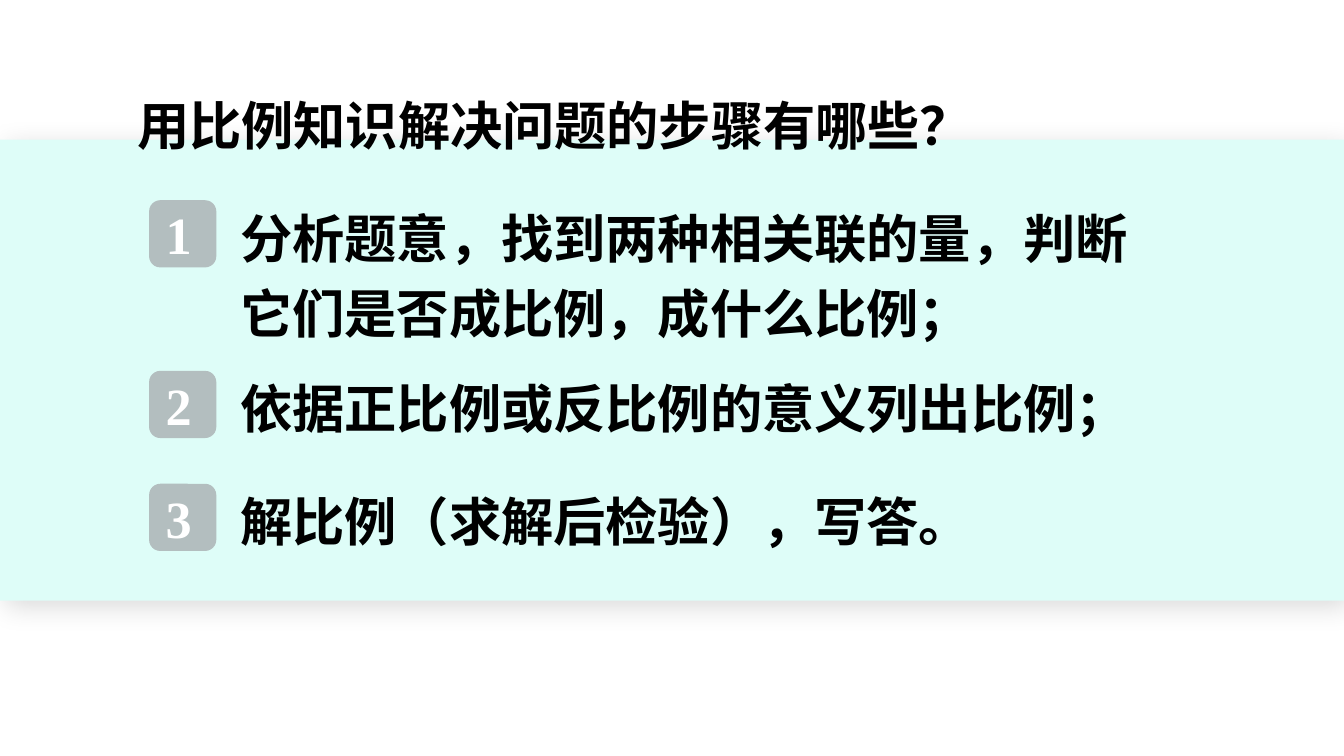
from lxml.etree import SubElement
from pptx import Presentation
from pptx.dml.color import RGBColor
from pptx.enum.shapes import MSO_SHAPE
from pptx.enum.text import MSO_ANCHOR, MSO_AUTO_SIZE, PP_ALIGN
from pptx.oxml.ns import qn
from pptx.util import Inches, Pt

CJK_FONT = "Noto Sans CJK SC"
BADGE_SIZE = 0.5
STEPS = [
    (1.39, 1.23, "分析题意，找到两种相关联的量，判断它们是否成比例，成什么比例；"),
    (2.66, 0.66, "依据正比例或反比例的意义列出比例；"),
    (3.5, 0.66, "解比例（求解后检验），写答。"),
]


def color(hex_value):
    return RGBColor.from_string(hex_value)


def write(shape, text, font_name, hex_value, alignment, anchor, line_spacing=1.0):
    frame = shape.text_frame
    frame.text = text
    frame.word_wrap = True
    frame.auto_size = MSO_AUTO_SIZE.NONE
    frame.vertical_anchor = anchor
    paragraph = frame.paragraphs[0]
    paragraph.alignment = alignment
    paragraph.line_spacing = line_spacing
    font = paragraph.runs[0].font
    font.name = font_name
    font.size = Pt(28)
    font.bold = True
    font.color.rgb = color(hex_value)
    SubElement(font._element, qn("a:ea"), typeface=CJK_FONT)


def add_block(slide, kind, left, top, width, height, fill):
    block = slide.shapes.add_shape(
        kind, Inches(left), Inches(top), Inches(width), Inches(height))
    block.shadow.inherit = False
    block.fill.solid()
    block.fill.fore_color.rgb = color(fill)
    block.line.fill.background()
    return block


def add_band(slide, left, top, width, height):
    """Add the shaded background band behind everything else."""
    band = add_block(slide, MSO_SHAPE.RECTANGLE, left, top, width, height, "DEFDF8")
    effects = band._element.spPr.find(qn("a:effectLst"))
    shadow = SubElement(effects, qn("a:outerShdw"), blurRad=str(Pt(15)),
                        dist=str(Pt(5)), dir=str(45 * 60000),
                        algn="ctr", rotWithShape="0")
    shade = SubElement(shadow, qn("a:srgbClr"), val="000000")
    SubElement(shade, qn("a:alpha"), val="15000")
    slide.shapes._spTree.insert(2, band._element)


def place_title(slide, left, top, width, height):
    title = slide.shapes.title
    title.left, title.top = Inches(left), Inches(top)
    title.width, title.height = Inches(width), Inches(height)
    write(title, "用比例知识解决问题的步骤有哪些？", "Arial", "000000",
          PP_ALIGN.LEFT, MSO_ANCHOR.TOP)


def add_step(slide, number, text, left, top, width, height):
    """Add a numbered badge with its text to the right."""
    badge = add_block(slide, MSO_SHAPE.ROUNDED_RECTANGLE, left, top + 0.1,
                      BADGE_SIZE, BADGE_SIZE, "B3BEBF")
    write(badge, str(number), "Times New Roman", "FFFFFF",
          PP_ALIGN.JUSTIFY, MSO_ANCHOR.MIDDLE)
    indent = BADGE_SIZE + 0.08
    box = slide.shapes.add_textbox(Inches(left + indent), Inches(top),
                                   Inches(width - indent), Inches(height))
    write(box, text, CJK_FONT, "000000", PP_ALIGN.LEFT, MSO_ANCHOR.TOP, 1.2)


def main():
    presentation = Presentation()
    presentation.slide_width = Inches(10)
    presentation.slide_height = presentation.slide_width * 9 // 16
    slide = presentation.slides.add_slide(presentation.slide_layouts[5])
    add_band(slide, 0, 1.04, 10, 3.43)
    place_title(slide, 0.92, 0.64, 6.43, 0.57)
    for number, (top, height, text) in enumerate(STEPS, start=1):
        add_step(slide, number, text, 1.11, top, 7.69, height)
    presentation.save("out.pptx")


if __name__ == "__main__":
    main()
